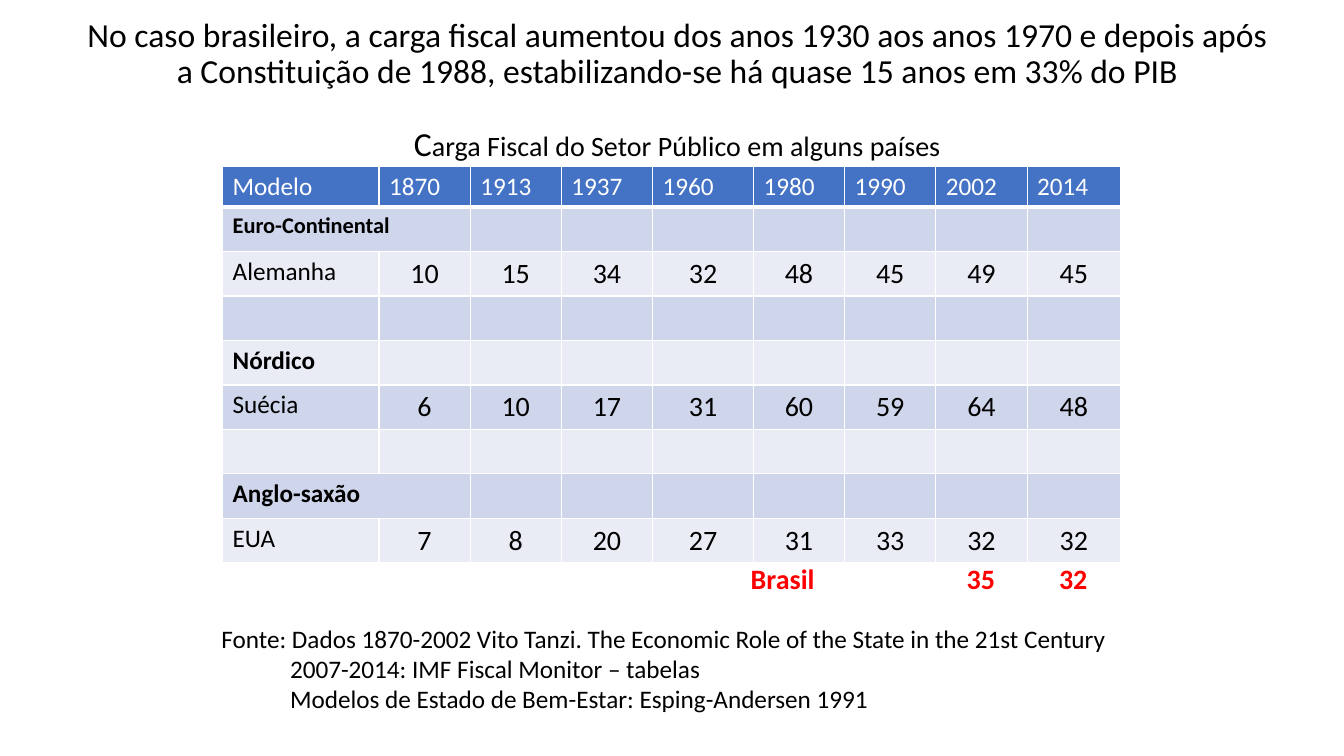
import pptx
import pptx.dml.color
import pptx.enum.text
import pptx.oxml
import pptx.oxml.ns
import pptx.util
from pptx.util import Cm

FONT = "Calibri"
BLACK, WHITE, RED = "000000", "FFFFFF", "FF0000"
HEADER_FILL, BANDS = "4472C4", ("CFD5EA", "E9EBF5")
CENTER = pptx.enum.text.PP_ALIGN.CENTER
LEFT = pptx.enum.text.PP_ALIGN.LEFT

HEADER = ["Modelo", 1870, 1913, 1937, 1960, 1980, 1990, 2002, 2014]
# Each row: label, label size, label spans two columns, values
ROWS = [
    ("Euro-Continental", 16, True, []),
    ("Alemanha", 18, False, [10, 15, 34, 32, 48, 45, 49, 45]),
    ("", 18, False, []),
    ("Nórdico", 18, False, []),
    ("Suécia", 18, False, [6, 10, 17, 31, 60, 59, 64, 48]),
    ("", 18, False, []),
    ("Anglo-saxão", 18, True, []),
    ("EUA", 18, False, [7, 8, 20, 27, 31, 33, 32, 32]),
]
COLUMN_WIDTHS = [3.94, 2.3, 2.3, 2.3, 2.54, 2.3, 2.3, 2.3, 2.36]


def color(value):
    return pptx.dml.color.RGBColor.from_string(value)


def set_attributes(target, values):
    for name, value in values.items():
        setattr(target, name, value)


def add_run(paragraph, text, size, text_color=BLACK, bold=False):
    run = paragraph.add_run()
    run.text = text
    set_attributes(run.font, {"name": FONT, "size": pptx.util.Pt(size), "bold": bold})
    run.font.color.rgb = color(text_color)


def add_text_frame(slide, box):
    frame = slide.shapes.add_textbox(*(Cm(length) for length in box)).text_frame
    frame.word_wrap = True
    return frame


def add_xml(parent, xml):
    parent.append(pptx.oxml.parse_xml(
        xml.replace(">", " " + pptx.oxml.ns.nsdecls("a") + ">", 1)))


def add_title(slide, box):
    frame = add_text_frame(slide, box)
    statement, caption = frame.paragraphs[0], frame.add_paragraph()
    for paragraph in (statement, caption):
        set_attributes(paragraph, {"alignment": CENTER, "line_spacing": 0.9})
    add_run(statement, "No caso brasileiro, a carga fiscal aumentou dos anos 1930 aos anos "
            "1970 e depois após a Constituição de 1988, estabilizando-se há quase "
            "15 anos em 33% do PIB", 24)
    # One line of space sets the table caption apart
    caption.space_before = pptx.util.Pt(26)
    add_run(caption, "C", 24)
    add_run(caption, "arga Fiscal do Setor Público em alguns países", 20)


def fill_cell(cell, text, size, fill, text_color=BLACK, bold=False,
              alignment=LEFT, top=1, bottom=1):
    properties = cell._tc.get_or_add_tcPr()
    for side, width in (("L", 1), ("R", 1), ("T", top), ("B", bottom)):
        add_xml(properties, f'<a:ln{side} w="{width * 12700}"><a:solidFill>'
                f'<a:srgbClr val="{WHITE}"/></a:solidFill></a:ln{side}>')
    cell.fill.solid()
    cell.fill.fore_color.rgb = color(fill)
    if text:
        paragraph = cell.text_frame.paragraphs[0]
        paragraph.alignment = alignment
        add_run(paragraph, text, size, text_color, bold)


def add_tax_table(slide, left, top, header_height, row_height):
    height = header_height + row_height * len(ROWS)
    table = slide.shapes.add_table(
        len(ROWS) + 1, len(HEADER), Cm(left), Cm(top),
        Cm(sum(COLUMN_WIDTHS)), Cm(height)).table
    for column, width in zip(table.columns, COLUMN_WIDTHS):
        column.width = Cm(width)
    for index, row in enumerate(table.rows):
        row.height = Cm(row_height if index else header_height)
    # Header
    for column, text in enumerate(HEADER):
        fill_cell(table.cell(0, column), str(text), 18, HEADER_FILL, WHITE, bottom=3)
    # Groups and countries
    for index, (label, size, spans, values) in enumerate(ROWS, start=1):
        fill = BANDS[(index - 1) % 2]
        top_border = 3 if index == 1 else 1
        fill_cell(table.cell(index, 0), label, size, fill, bold=not values, top=top_border)
        for column in range(1, len(HEADER)):
            text = str(values[column - 1]) if values else ""
            fill_cell(table.cell(index, column), text, 20, fill,
                      alignment=CENTER, top=top_border)
        if spans:
            table.cell(index, 0).merge(table.cell(index, 1))


def add_brazil_row(slide, box, tab_stops):
    paragraph = add_text_frame(slide, box).paragraphs[0]
    stops = "".join(f'<a:tab pos="{Cm(stop)}" algn="l"/>' for stop in tab_stops)
    add_xml(paragraph._p.get_or_add_pPr(), f"<a:tabLst>{stops}</a:tabLst>")
    add_run(paragraph, "Brasil\t35\t32", 20, RED, True)


def add_sources(slide, box, indent):
    frame = add_text_frame(slide, box)
    sources = [
        "Fonte: Dados 1870-2002 Vito Tanzi. The Economic Role of the State in the 21st Century",
        "2007-2014: IMF Fiscal Monitor – tabelas",
        "Modelos de Estado de Bem-Estar: Esping-Andersen 1991",
    ]
    for index, source in enumerate(sources):
        paragraph = frame.add_paragraph() if index else frame.paragraphs[0]
        if index:
            paragraph._p.get_or_add_pPr().set("marL", str(Cm(indent)))
        add_run(paragraph, source, 18)


def main():
    presentation = pptx.Presentation()
    set_attributes(presentation, {"slide_width": Cm(33.87), "slide_height": Cm(19.05)})
    slide = presentation.slides.add_slide(presentation.slide_layouts[6])
    add_title(slide, (1.83, 0.33, 30.48, 3.4))
    add_tax_table(slide, 5.61, 4.19, 1.03, 1.12)
    add_sources(slide, (5.33, 15.57, 23.52, 2.57), indent=1.73)
    add_brazil_row(slide, (18.67, 14.02, 9.55, 1.12), tab_stops=(5.44, 7.77))
    presentation.save("out.pptx")


if __name__ == "__main__":
    main()
